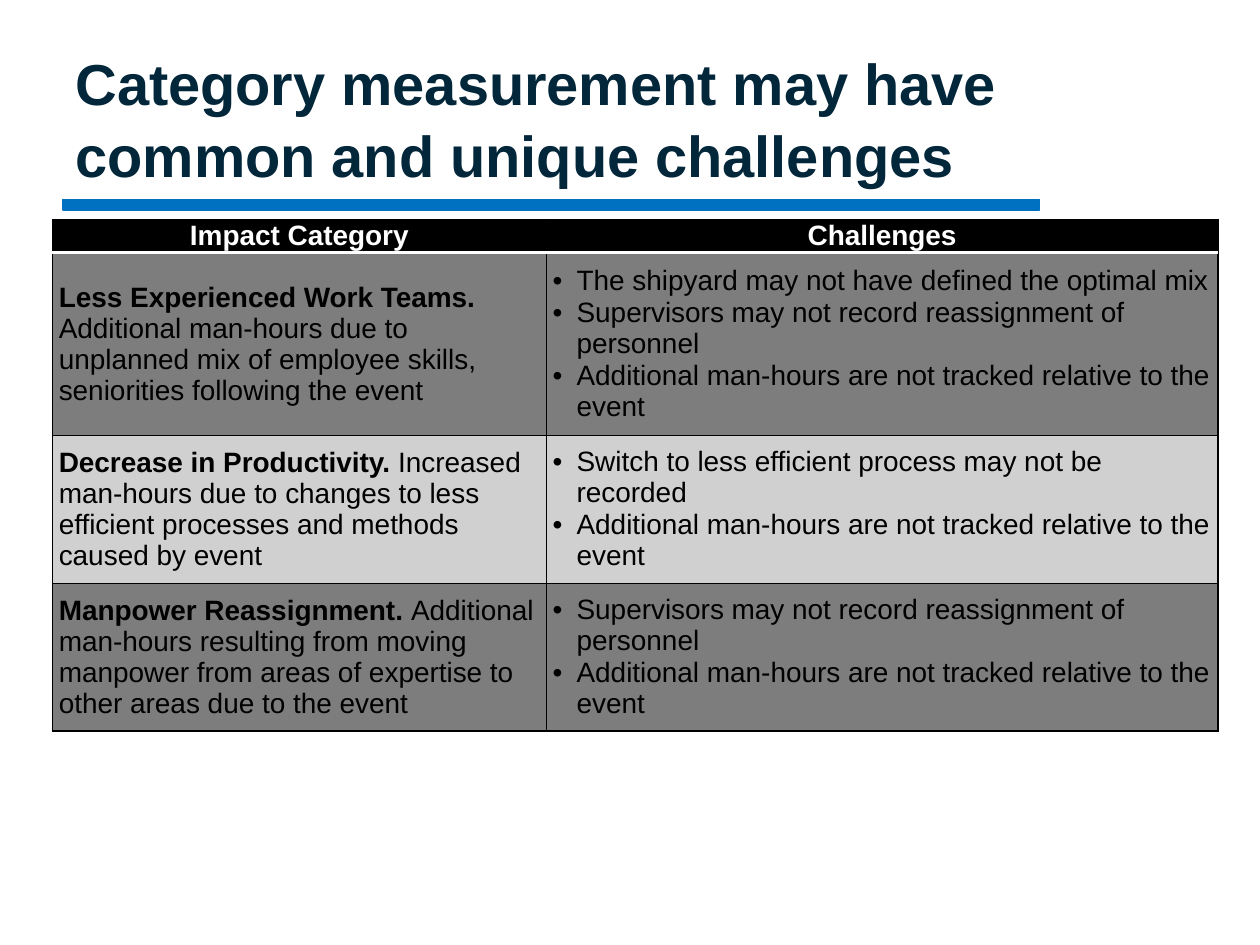
from lxml import etree
from pptx import Presentation
from pptx.dml.color import RGBColor
from pptx.enum import shapes, text
from pptx.oxml.ns import qn
from pptx.util import Pt

BLACK = RGBColor(0x00, 0x00, 0x00)
WHITE = RGBColor(0xFF, 0xFF, 0xFF)
NAVY = RGBColor(0x02, 0x26, 0x3A)
BLUE = RGBColor(0x00, 0x70, 0xC0)
DARK_GRAY = RGBColor(0x7D, 0x7D, 0x7D)
LIGHT_GRAY = RGBColor(0xD0, 0xD0, 0xD0)
FONT = "Arial"

TITLE = "Category measurement may have common and unique challenges"
HEADINGS = ["Impact Category", "Challenges"]
NOT_TRACKED = "Additional man-hours are not tracked relative to the event"
NOT_RECORDED = "Supervisors may not record reassignment of personnel"
IMPACTS = [
    ("Less Experienced Work Teams.",
     " Additional man-hours due to unplanned mix of employee skills, "
     "seniorities following the event",
     ["The shipyard may not have defined the optimal mix", NOT_RECORDED, NOT_TRACKED]),
    ("Decrease in Productivity. ",
     "Increased man-hours due to changes to less efficient processes and "
     "methods caused by event",
     ["Switch to less efficient process may not be recorded", NOT_TRACKED]),
    ("Manpower Reassignment. ",
     "Additional man-hours resulting from moving manpower from areas of "
     "expertise to other areas due to the event",
     [NOT_RECORDED, NOT_TRACKED]),
]
COLUMN_WIDTHS = [282.24, 383.76]
ROW_HEIGHTS = [18.5, 100.5, 81.5, 81.5]


def add_run(p, words, size, color, bold):
    r = p.add_run()
    r.text = words
    r.font.name = FONT
    r.font.size = Pt(size)
    r.font.bold = bold
    r.font.color.rgb = color


def add_bullet(p):
    pPr = p._p.get_or_add_pPr()
    pPr.set("marL", str(Pt(13.7)))
    pPr.set("indent", str(Pt(-13.7)))
    etree.SubElement(pPr, qn("a:buFont"), typeface=FONT)
    etree.SubElement(pPr, qn("a:buChar"), char="•")


def style_cell(cell, fill, inset, bottom=(BLACK, 0.75), top=(BLACK, 0.75)):
    cell.fill.solid()
    cell.fill.fore_color.rgb = fill
    cell.vertical_anchor = text.MSO_ANCHOR.MIDDLE
    cell.margin_left = cell.margin_right = Pt(inset)
    cell.margin_top = cell.margin_bottom = Pt(inset)
    side = (BLACK, 0.75)
    edges = [("a:lnL", side), ("a:lnR", side), ("a:lnT", top), ("a:lnB", bottom)]
    tcPr = cell._tc.get_or_add_tcPr()
    for i, (tag, (color, width)) in enumerate(edges):
        ln = etree.Element(qn(tag), w=str(Pt(width)))
        solid = etree.SubElement(ln, qn("a:solidFill"))
        etree.SubElement(solid, qn("a:srgbClr"), val=str(color))
        tcPr.insert(i, ln)


def add_title(s, left, top, width, height):
    tf = s.shapes.add_textbox(Pt(left), Pt(top), Pt(width), Pt(height)).text_frame
    tf.word_wrap = True
    tf.vertical_anchor = text.MSO_ANCHOR.MIDDLE
    p = tf.paragraphs[0]
    p.line_spacing = 1.04
    add_run(p, TITLE, 33, NAVY, True)


def add_rule(s, left, top, width, height):
    sp = s.shapes.add_shape(shapes.MSO_SHAPE.RECTANGLE,
                            Pt(left), Pt(top), Pt(width), Pt(height))
    sp.shadow.inherit = False
    sp.fill.solid()
    sp.fill.fore_color.rgb = BLUE
    sp.line.color.rgb = BLUE
    sp.line.width = Pt(0.75)


def add_impact_table(s, left, top):
    table = s.shapes.add_table(
        len(ROW_HEIGHTS), len(COLUMN_WIDTHS), Pt(left), Pt(top),
        Pt(sum(COLUMN_WIDTHS)), Pt(sum(ROW_HEIGHTS))).table
    for column, width in zip(table.columns, COLUMN_WIDTHS):
        column.width = Pt(width)
    for row, height in zip(table.rows, ROW_HEIGHTS):
        row.height = Pt(height)

    header_edge = (WHITE, 2)
    for cell, heading in zip(table.rows[0].cells, HEADINGS):
        style_cell(cell, BLACK, 0, bottom=header_edge)
        p = cell.text_frame.paragraphs[0]
        p.alignment = text.PP_ALIGN.CENTER
        add_run(p, heading, 16, WHITE, True)

    for i, (name, detail, challenges) in enumerate(IMPACTS, 1):
        fill = DARK_GRAY if i % 2 else LIGHT_GRAY
        top_edge = header_edge if i == 1 else (BLACK, 0.75)
        impact, challenge = table.rows[i].cells
        for cell in (impact, challenge):
            style_cell(cell, fill, 3.6, top=top_edge)
        p = impact.text_frame.paragraphs[0]
        add_run(p, name, 16, BLACK, True)
        add_run(p, detail, 16, BLACK, False)
        tf = challenge.text_frame
        for j, words in enumerate(challenges):
            p = tf.add_paragraph() if j else tf.paragraphs[0]
            if j:
                p.space_before = Pt(0.5)
            add_bullet(p)
            add_run(p, words, 16, BLACK, False)


def main():
    prs = Presentation()
    prs.slide_width, prs.slide_height = Pt(720), Pt(540)
    s = prs.slides.add_slide(prs.slide_layouts[6])
    add_rule(s, 36, 114, 558, 6)
    add_title(s, 36, 21.6, 564, 90)
    add_impact_table(s, 30, 125.3)
    prs.save("out.pptx")


if __name__ == "__main__":
    main()
